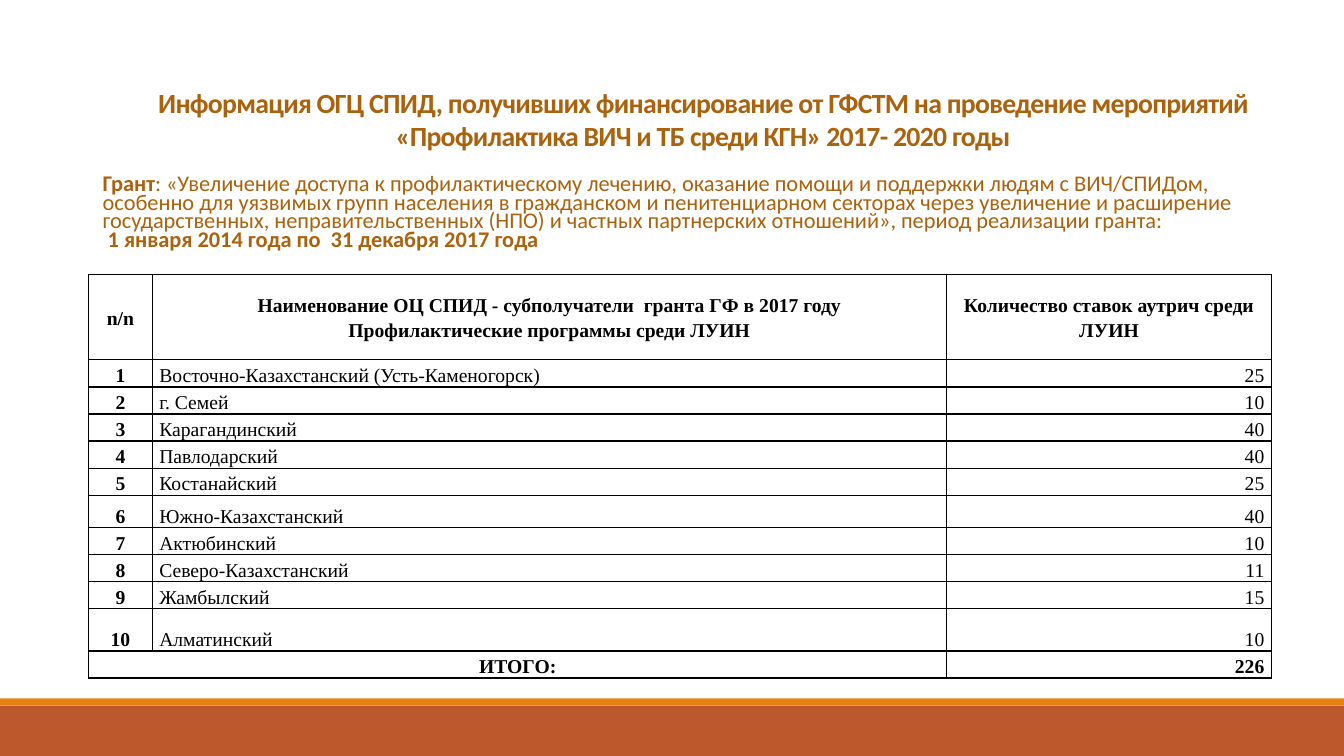
from dataclasses import dataclass

from lxml.etree import SubElement
from pptx import Presentation
from pptx.dml.color import RGBColor
from pptx.enum.shapes import MSO_SHAPE as Shape
from pptx.enum.text import MSO_ANCHOR as Anchor, PP_ALIGN as Align
from pptx.oxml.ns import qn
from pptx.slide import Slide
from pptx.table import _Cell as Cell
from pptx.text.text import Font, TextFrame
from pptx.util import Inches, Pt

BROWN = "AB620D"
BLACK = "000000"
TITLE = (
    "Информация ОГЦ СПИД, получивших финансирование от ГФСТМ на проведение "
    "мероприятий «Профилактика ВИЧ и ТБ среди КГН» 2017- 2020 годы"
)
GRANT = (
    ("Грант", True),
    (
        ": «Увеличение доступа к профилактическому лечению, оказание помощи и "
        "поддержки людям с ВИЧ/СПИДом, особенно для уязвимых групп населения в "
        "гражданском и пенитенциарном секторах через увеличение и расширение "
        "государственных, неправительственных (НПО) и частных партнерских "
        "отношений», период реализации гранта:",
        False,
    ),
    (" 1 января 2014 года по  31 декабря 2017 года", True),
)
HEADINGS = (
    "n/n",
    "Наименование ОЦ СПИД - субполучатели  гранта ГФ в 2017 году\n"
    "Профилактические программы среди ЛУИН",
    "Количество ставок аутрич среди ЛУИН",
)
COLUMN_WIDTHS = (0.63, 7.88, 3.22)
HEADER_HEIGHT = 0.85
TOTAL_HEIGHT = 0.24


@dataclass
class Band:
    top: float
    height: float
    color: str


@dataclass
class Center:
    name: str
    posts: int
    height: float = 0.25


BANDS = (Band(7, 0.5, "BD582C"), Band(6.93, 0.07, "E48312"))
CENTERS = (
    Center("Восточно-Казахстанский (Усть-Каменогорск)", 25),
    Center("г. Семей", 10),
    Center("Карагандинский", 40),
    Center("Павлодарский", 40),
    Center("Костанайский", 25),
    Center("Южно-Казахстанский", 40, 0.32),
    Center("Актюбинский", 10),
    Center("Северо-Казахстанский", 11),
    Center("Жамбылский", 15),
    Center("Алматинский", 10, 0.42),
)


def rgb(color: str) -> RGBColor:
    return RGBColor.from_string(color)


def style(font: Font, name: str, size: float, color: str) -> None:
    font.name = name
    font.size = Pt(size)
    font.color.rgb = rgb(color)


def draw_band(page: Slide, band: Band) -> None:
    bar = page.shapes.add_shape(
        Shape.RECTANGLE, 0, Inches(band.top), Inches(13.33), Inches(band.height)
    )
    bar.shadow.inherit = False
    bar.fill.solid()
    bar.fill.fore_color.rgb = rgb(band.color)
    bar.line.fill.background()


def add_text(
    page: Slide, left: float, top: float, width: float, height: float
) -> TextFrame:
    box = page.shapes.add_textbox(
        Inches(left), Inches(top), Inches(width), Inches(height)
    )
    frame = box.text_frame
    frame.word_wrap = True
    return frame


def draw_title(page: Slide) -> None:
    frame = add_text(page, 1.05, 0.31, 11.84, 1.59)
    frame.vertical_anchor = Anchor.BOTTOM
    frame.margin_bottom = Inches(0.39)
    para = frame.paragraphs[0]
    para.alignment = Align.CENTER
    span = para.add_run()
    span.text = TITLE
    style(span.font, "Calibri", 19.8, BROWN)
    span.font.bold = True
    span.font._element.set("spc", "-50")


def draw_grant(page: Slide) -> None:
    frame = add_text(page, 0.92, 1.7, 11.86, 0.8)
    frame.margin_left = Inches(0.1)
    frame.margin_right = 0
    para = frame.paragraphs[0]
    para.line_spacing = 0.7
    style(para.font, "Calibri", 16, BROWN)
    for text, bold in GRANT:
        if text == GRANT[-1][0]:
            para.add_line_break()
        span = para.add_run()
        span.text = text
        span.font.bold = bold


def add_borders(cell: Cell) -> None:
    properties = cell._tc.get_or_add_tcPr()
    for side in ("a:lnL", "a:lnR", "a:lnT", "a:lnB"):
        line = SubElement(properties, qn(side), w=str(Pt(1)))
        fill = SubElement(line, qn("a:solidFill"))
        SubElement(fill, qn("a:srgbClr"), val=BLACK)


def fill_cell(
    cell: Cell, text: str, align: Align, bold: bool, anchor: Anchor = Anchor.BOTTOM
) -> None:
    cell.text = text
    cell.vertical_anchor = anchor
    cell.margin_left = cell.margin_right = Inches(0.07)
    cell.margin_top = cell.margin_bottom = 0
    for para in cell.text_frame.paragraphs:
        para.alignment = align
        para.line_spacing = 1.15
        style(para.font, "Times New Roman", 14, BLACK)
        para.font.bold = bold


def draw_table(page: Slide) -> None:
    heights = (HEADER_HEIGHT, *(center.height for center in CENTERS), TOTAL_HEIGHT)
    table = page.shapes.add_table(
        len(heights), len(COLUMN_WIDTHS),
        Inches(0.88), Inches(2.72), Inches(sum(COLUMN_WIDTHS)), Inches(sum(heights)),
    ).table
    table.first_row = table.horz_banding = False
    for column, width in zip(table.columns, COLUMN_WIDTHS):
        column.width = Inches(width)
    for row, height in zip(table.rows, heights):
        row.height = Inches(height)
        for cell in row.cells:
            add_borders(cell)
            cell.fill.background()

    for index, heading in enumerate(HEADINGS):
        fill_cell(table.cell(0, index), heading, Align.CENTER, True, Anchor.MIDDLE)
    for number, center in enumerate(CENTERS, start=1):
        fill_cell(table.cell(number, 0), str(number), Align.CENTER, True)
        fill_cell(table.cell(number, 1), center.name, Align.LEFT, False)
        fill_cell(table.cell(number, 2), str(center.posts), Align.RIGHT, False)

    last = len(heights) - 1
    total = sum(center.posts for center in CENTERS)
    table.cell(last, 0).merge(table.cell(last, 1))
    fill_cell(table.cell(last, 0), "ИТОГО:", Align.CENTER, True)
    fill_cell(table.cell(last, 2), str(total), Align.RIGHT, True)


def main() -> None:
    deck = Presentation()
    deck.slide_width = Inches(13.33)
    deck.slide_height = Inches(7.5)
    page = deck.slides.add_slide(deck.slide_layouts[6])
    for band in BANDS:
        draw_band(page, band)
    draw_grant(page)
    draw_title(page)
    draw_table(page)
    deck.save("out.pptx")


if __name__ == "__main__":
    main()
